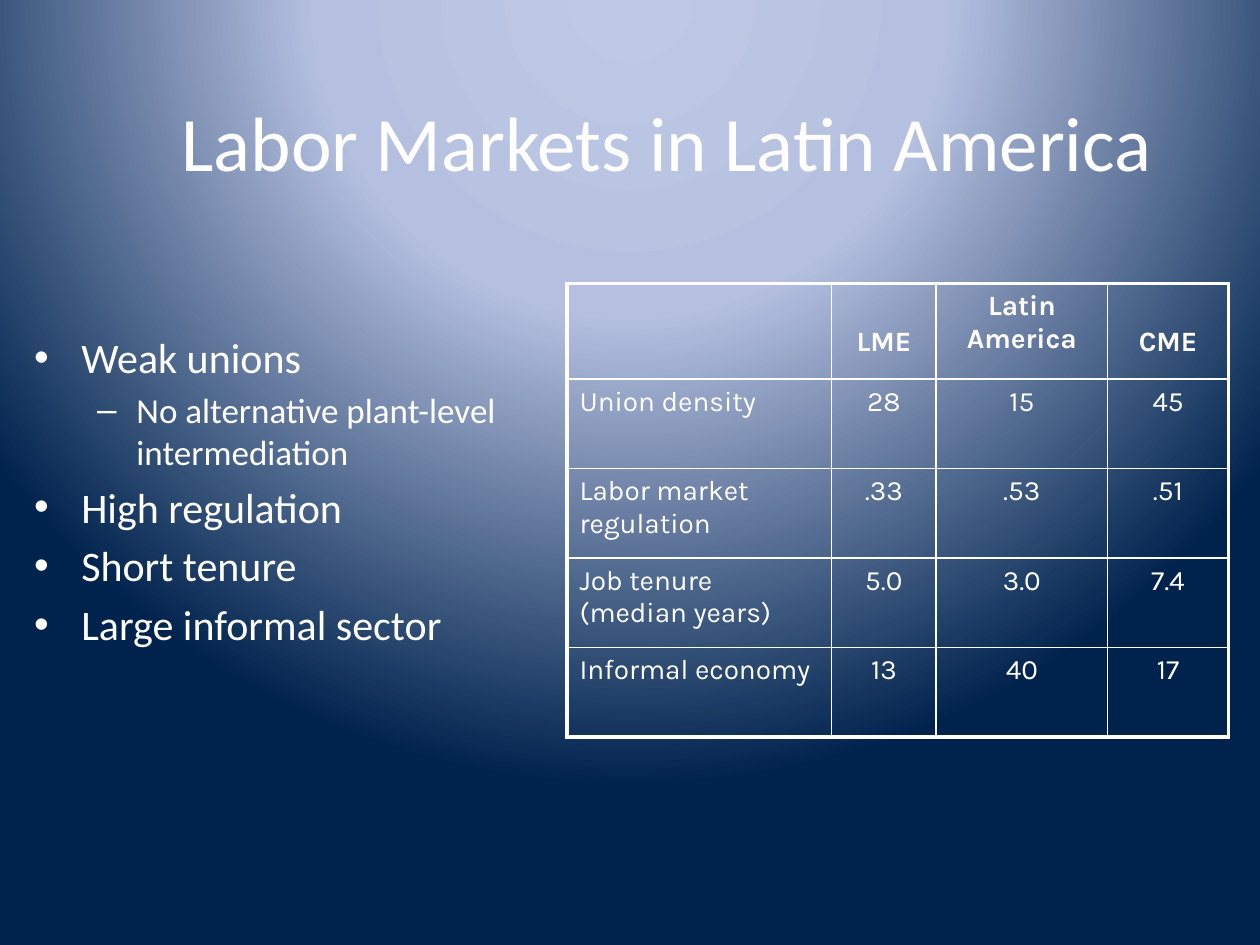
from lxml import etree
from pptx import Presentation
from pptx import util as u
from pptx.dml.color import RGBColor
from pptx.enum import text
from pptx.oxml import parse_xml
from pptx.oxml.ns import qn

TITLE = "Labor Markets in Latin America"
POINTS = [
    (0, "Weak unions"),
    (1, "No alternative plant-level intermediation"),
    (0, "High regulation"),
    (0, "Short tenure"),
    (0, "Large informal sector"),
]
ROWS = [
    ("", "LME", "Latin America", "CME"),
    ("Union density", "28", "15", "45"),
    ("Labor market regulation", ".33", ".53", ".51"),
    ("Job tenure (median years)", "5.0", "3.0", "7.4"),
    ("Informal economy", "13", "40", "17"),
]
COL_WIDTHS = [2.1, 0.83, 1.36, 0.96]
ROW_HEIGHTS = [0.76] + [0.71] * 4
HEADER_TOPS = [0.05, 0.34, 0.05, 0.34]
BOXES = {
    "title": (1.17, 0.33, 8.25, 1.57),
    "body": (0.17, 2.58, 4.17, 3.17),
    "table": (4.5, 2.25, sum(COL_WIDTHS), sum(ROW_HEIGHTS)),
}
THEME = {
    "ink": "FFFFFF",
    "glow": [(0, "BFC9E5"), (40, "B5C0E0"), (100, "00234D")],
    "font": "Calibri",
    "table_font": "Karla",
    "title": 44,
    "levels": [24, 20],
    "cell": 16,
    "inner": 1,
    "outer": 2.25,
}
NS = ('xmlns:a="http://schemas.openxmlformats.org/drawingml/2006/main" '
      'xmlns:p="http://schemas.openxmlformats.org/presentationml/2006/main"')


def place(sp, box):
    for name, value in zip(("left", "top", "width", "height"), box):
        setattr(sp, name, u.Inches(value))


def write(p, words, font, size, bold=False):
    r = p.add_run()
    r.text = words
    for name, value in {"name": font, "size": u.Pt(size), "bold": bold}.items():
        setattr(r.font, name, value)
    r.font.color.rgb = RGBColor.from_string(THEME["ink"])


def paint_background(s):
    stops = "".join(
        f'<a:gs pos="{pos * 1000}"><a:srgbClr val="{color}"/></a:gs>'
        for pos, color in THEME["glow"])
    bg = parse_xml(
        f'<p:bg {NS}><p:bgPr><a:gradFill rotWithShape="1"><a:gsLst>{stops}</a:gsLst>'
        '<a:path path="circle"><a:fillToRect l="50000" t="-80000" r="50000" b="180000"/>'
        '</a:path></a:gradFill><a:effectLst/></p:bgPr></p:bg>')
    s.element.find(qn("p:cSld")).insert(0, bg)


def draw_borders(cell, edges):
    tc_pr = cell._tc.get_or_add_tcPr()
    for side, is_outer in edges.items():
        width = THEME["outer" if is_outer else "inner"]
        ln = etree.SubElement(tc_pr, qn(f"a:ln{side}"), w=str(u.Pt(width)))
        fill = etree.SubElement(ln, qn("a:solidFill"))
        etree.SubElement(fill, qn("a:srgbClr"), val=THEME["ink"])


def add_market_table(s):
    frame = s.shapes.add_table(len(ROWS), len(COL_WIDTHS),
                               *map(u.Inches, BOXES["table"]))
    table = frame.table
    table.first_row = table.horz_banding = False
    for col, width in zip(table.columns, COL_WIDTHS):
        col.width = u.Inches(width)
    for row, height in zip(table.rows, ROW_HEIGHTS):
        row.height = u.Inches(height)
    last_row, last_col = len(ROWS) - 1, len(COL_WIDTHS) - 1
    for i, row in enumerate(ROWS):
        for j, words in enumerate(row):
            cell = table.cell(i, j)
            draw_borders(cell, {"L": j == 0, "R": j == last_col,
                                "T": i == 0, "B": i == last_row})
            cell.fill.background()
            if i == 0:
                cell.margin_top = u.Inches(HEADER_TOPS[j])
            if words:
                p = cell.text_frame.paragraphs[0]
                p.alignment = text.PP_ALIGN.CENTER if j else text.PP_ALIGN.LEFT
                write(p, words, THEME["table_font"], THEME["cell"], i == 0)


def main():
    prs = Presentation()
    prs.slide_width, prs.slide_height = u.Inches(10), u.Inches(7.5)
    s = prs.slides.add_slide(prs.slide_layouts[1])
    paint_background(s)
    title, body = s.placeholders
    place(title, BOXES["title"])
    place(body, BOXES["body"])

    tf = title.text_frame
    tf.vertical_anchor = text.MSO_ANCHOR.MIDDLE
    tf.paragraphs[0].alignment = text.PP_ALIGN.CENTER
    write(tf.paragraphs[0], TITLE, THEME["font"], THEME["title"])

    tf = body.text_frame
    tf.auto_size = text.MSO_AUTO_SIZE.NONE
    for i, (level, words) in enumerate(POINTS):
        p = tf.add_paragraph() if i else tf.paragraphs[0]
        p.level = level
        write(p, words, THEME["font"], THEME["levels"][level])

    add_market_table(s)
    prs.save("out.pptx")


if __name__ == "__main__":
    main()
